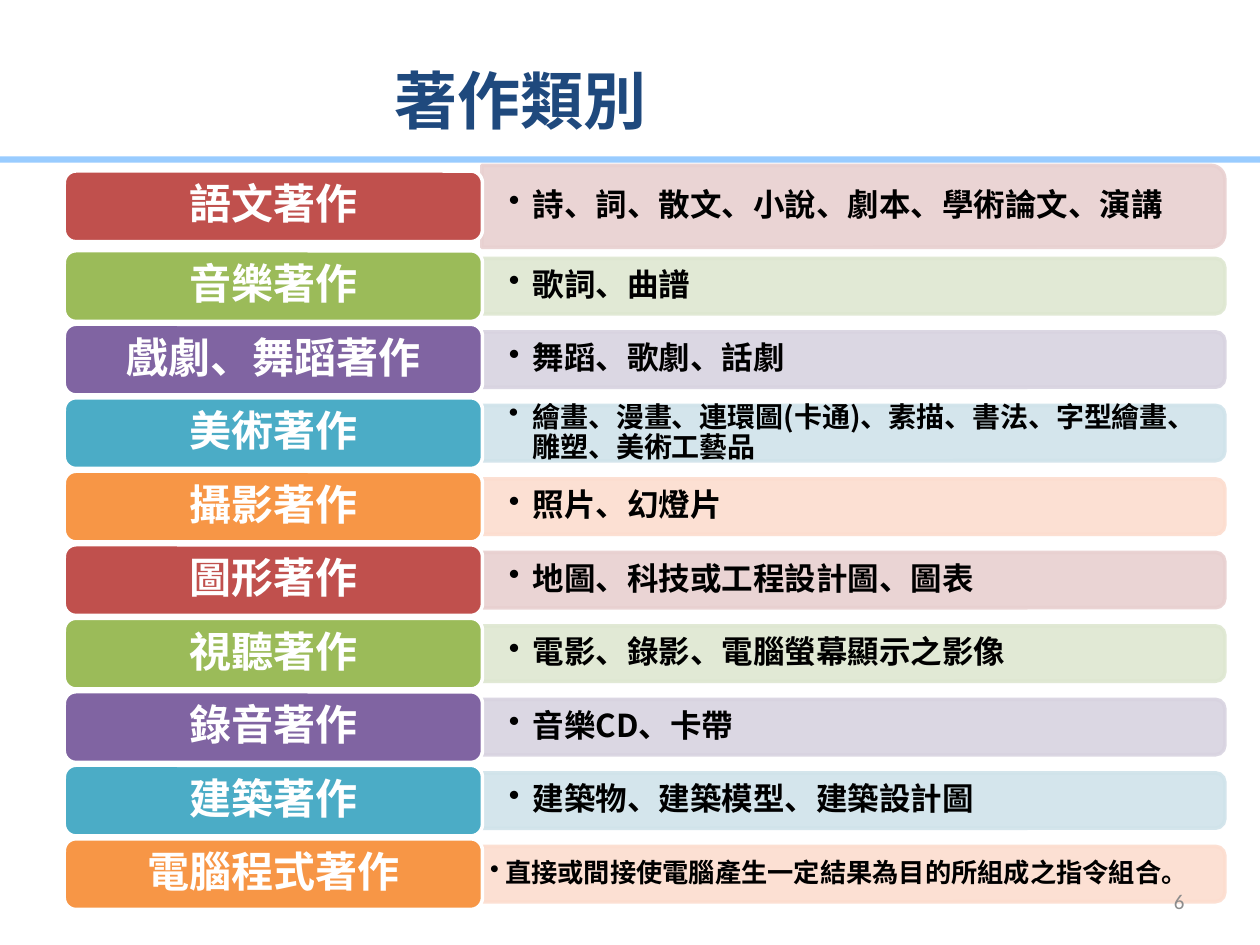
"""Build the slide that lists categories of copyrighted works with examples."""
from lxml.etree import SubElement
from pptx import Presentation
from pptx.dml.color import RGBColor
from pptx.enum.shapes import MSO_SHAPE
from pptx.enum.text import MSO_ANCHOR, PP_ALIGN
from pptx.oxml.ns import qn
from pptx.util import Pt

CJK_FONT = "Noto Sans CJK SC"
COLOURS = [("C0504D", "E8D0D0"), ("9BBB59", "DEE7D1"), ("8064A2", "D8D3E0"),
           ("4BACC6", "D0E3EA"), ("F79646", "FCDDCF")]
CATEGORIES = [
    ("語文著作", "詩、詞、散文、小說、劇本、學術論文、演講", 18),
    ("音樂著作", "歌詞、曲譜", 18),
    ("戲劇、舞蹈著作", "舞蹈、歌劇、話劇", 18),
    ("美術著作", "繪畫、漫畫、連環圖(卡通)、素描、書法、字型繪畫、雕塑、美術工藝品", 16),
    ("攝影著作", "照片、幻燈片", 18),
    ("圖形著作", "地圖、科技或工程設計圖、圖表", 18),
    ("視聽著作", "電影、錄影、電腦螢幕顯示之影像", 18),
    ("錄音著作", "音樂CD、卡帶", 18),
    ("建築著作", "建築物、建築模型、建築設計圖", 18),
    ("電腦程式著作", "直接或間接使電腦產生一定結果為目的所組成之指令組合。", 15),
]
LABEL_LEFT, LABEL_WIDTH, LABEL_HEIGHT = 36.7, 239, 40.4
PANEL_LEFT, PANEL_LENGTH = 275.3, 424.6
FIRST_CENTRE, SECOND_CENTRE, ROW_PITCH = 117.9, 163.5, 42


def colour(code):
    """Return the colour for a hex string."""
    return RGBColor.from_string(code)


def add_block(slide, preset, box, fill, line=None, opacity=None):
    """Add a filled preset shape with an optional outline and opacity."""
    shape = slide.shapes.add_shape(preset, *map(Pt, box))
    shape.shadow.inherit = False
    shape.fill.solid()
    shape.fill.fore_color.rgb = colour(fill)
    if line:
        shape.line.color.rgb = colour(line)
        shape.line.width = Pt(2)
    else:
        shape.line.fill.background()
    if opacity:
        for code in shape._element.spPr.iter(qn("a:srgbClr")):
            SubElement(code, qn("a:alpha"), val=str(opacity * 1000))
    return shape


def write(shape, text, size, code, font=CJK_FONT, bold=True,
          align=PP_ALIGN.LEFT, anchor=MSO_ANCHOR.MIDDLE):
    """Set the single paragraph of a shape and return it."""
    frame = shape.text_frame
    frame.word_wrap = True
    frame.vertical_anchor = anchor
    frame.text = text
    paragraph = frame.paragraphs[0]
    paragraph.alignment = align
    for run in paragraph.runs:
        run.font.size, run.font.bold, run.font.name = Pt(size), bold, font
        run.font.color.rgb = colour(code)
        SubElement(run._r.get_or_add_rPr(), qn("a:ea"), typeface=font)
    return paragraph


def add_text(slide, box, text, size, code, **options):
    """Add a text box and return it with its paragraph."""
    shape = slide.shapes.add_textbox(*map(Pt, box))
    return shape, write(shape, text, size, code, **options)


def add_label(slide, centre, text, fill):
    """Add the rounded category label of one row."""
    box = LABEL_LEFT, centre - LABEL_HEIGHT / 2, LABEL_WIDTH, LABEL_HEIGHT
    shape = add_block(slide, MSO_SHAPE.ROUNDED_RECTANGLE, box, fill, "FFFFFF")
    paragraph = write(shape, text, 24, "FFFFFF", align=PP_ALIGN.CENTER)
    paragraph.line_spacing = 0.9
    paragraph.space_after = Pt(8.4)


def add_panel(slide, centre, thickness, fill):
    """Add the panel of one row, rounded at its right end."""
    middle = PANEL_LEFT + PANEL_LENGTH / 2
    box = (middle - thickness / 2, centre - PANEL_LENGTH / 2,
           thickness, PANEL_LENGTH)
    shape = add_block(slide, MSO_SHAPE.ROUND_2_SAME_RECTANGLE, box, fill, fill, 90)
    shape.rotation = 90


def add_examples(slide, centre, thickness, text, size, inset, indent):
    """Add the bulleted examples of one row."""
    height = thickness - 3
    box = PANEL_LEFT + 0.5, centre - height / 2, 423.4, height
    shape, paragraph = add_text(slide, box, text, size, "000000")
    frame = shape.text_frame
    frame.margin_left = frame.margin_right = Pt(inset)
    frame.margin_top = frame.margin_bottom = Pt(inset / 2)
    properties = paragraph._p.get_or_add_pPr()
    properties.set("marL", str(Pt(indent)))
    properties.set("indent", str(-Pt(indent)))
    SubElement(properties, qn("a:buChar"), char="•")
    paragraph.line_spacing = 0.9
    paragraph.space_after = Pt(size * 0.15)


def add_row(slide, index, label, examples, size):
    """Add one category with its label, panel and examples."""
    centre = SECOND_CENTRE + ROW_PITCH * (index - 1) if index else FIRST_CENTRE
    thickness = 31.7 if index else 46.8
    inset, indent = (4.3, 8.6) if size == 15 else (15, 13.5)
    dark, light = COLOURS[index % len(COLOURS)]
    add_panel(slide, centre, thickness, light)
    add_examples(slide, centre, thickness, examples, size, inset, indent)
    add_label(slide, centre, label, dark)


def main():
    """Build and save the slide."""
    presentation = Presentation()
    presentation.slide_width, presentation.slide_height = Pt(720), Pt(540)
    slide = presentation.slides.add_slide(presentation.slide_layouts[6])
    add_block(slide, MSO_SHAPE.RECTANGLE, (-2.9, 89.3, 724.3, 3.6), "99CCFF")
    add_text(slide, (218.2, 31.7, 478, 56.9), "著作類別", 36, "1F497D",
             anchor=MSO_ANCHOR.TOP)
    for index, category in enumerate(CATEGORIES):
        add_row(slide, index, *category)
    add_text(slide, (516, 500.5, 168, 28.8), "6", 12, "8C8C8C",
             font="Calibri", bold=False, align=PP_ALIGN.RIGHT)
    presentation.save("out.pptx")


if __name__ == "__main__":
    main()
